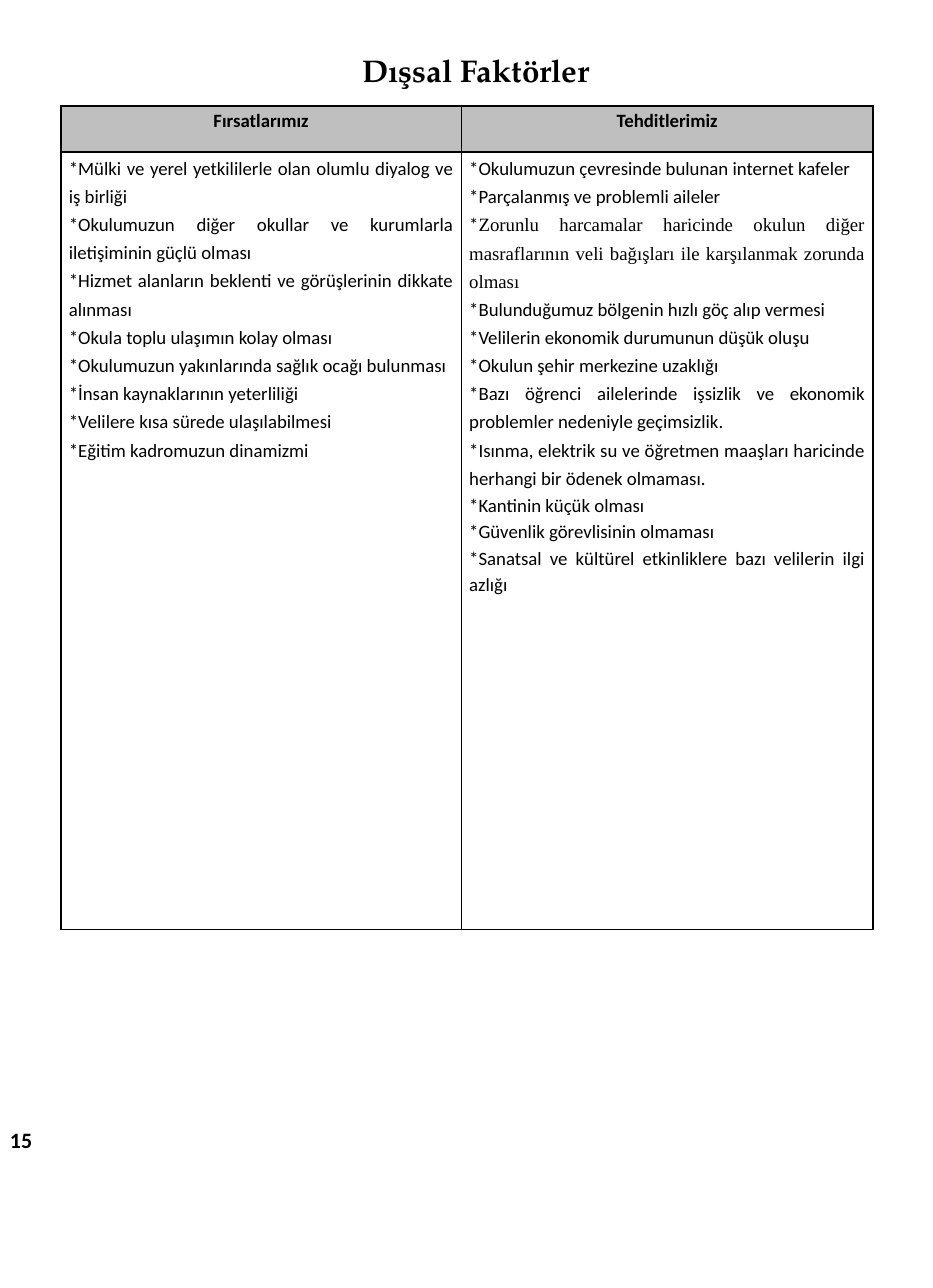
from dataclasses import dataclass

from lxml import etree
from pptx import Presentation
from pptx import util as u
from pptx.dml.color import RGBColor
from pptx.enum import text
from pptx.oxml.ns import qn


@dataclass(frozen=True)
class Theme:
    """Colours, fonts and type sizes of the slide."""
    ink: str = "000000"
    paper: str = "FFFFFF"
    header: str = "BFBFBF"
    title_font: str = "TeX Gyre Pagella"
    body_font: str = "Calibri"
    serif_font: str = "Times New Roman"
    title_size: int = 20
    number_size: int = 14
    body_size: int = 12
    border: float = 1
    loose: int = 18
    tight: int = 17


THEME = Theme()
TITLE_BOX = (37.61, 3.5, 28.05, 3.85)
TABLE_BOX = (6.53, 8.23, 87.06, 63.92)
NUMBER_BOX = (-0.12, 87.04, 6.17, 2.98)
LEFT_SHARE, HEADER_SHARE = 0.493, 0.056

HEADERS = ("Fırsatlarımız", "Tehditlerimiz")
OPPORTUNITIES = (
    "Mülki ve yerel yetkililerle olan olumlu diyalog ve iş birliği",
    "Okulumuzun diğer okullar ve kurumlarla iletişiminin güçlü olması",
    "Hizmet alanların beklenti ve görüşlerinin dikkate alınması",
    "Okula toplu ulaşımın kolay olması",
    "Okulumuzun yakınlarında sağlık ocağı bulunması",
    "İnsan kaynaklarının yeterliliği",
    "Velilere kısa sürede ulaşılabilmesi",
    "Eğitim kadromuzun dinamizmi",
)
SERIF_THREAT = ("Zorunlu harcamalar haricinde okulun diğer masraflarının "
                "veli bağışları ile karşılanmak zorunda olması")
TIGHT_THREATS = (
    "Kantinin küçük olması",
    "Güvenlik görevlisinin olmaması",
    "Sanatsal ve kültürel etkinliklere bazı velilerin ilgi azlığı",
)
THREATS = (
    "Okulumuzun çevresinde bulunan internet kafeler",
    "Parçalanmış ve problemli aileler",
    SERIF_THREAT,
    "Bulunduğumuz bölgenin hızlı göç alıp vermesi",
    "Velilerin ekonomik durumunun düşük oluşu",
    "Okulun şehir merkezine uzaklığı",
    "Bazı öğrenci ailelerinde işsizlik ve ekonomik problemler nedeniyle geçimsizlik.",
    "Isınma, elektrik su ve öğretmen maaşları haricinde herhangi bir ödenek olmaması.",
) + TIGHT_THREATS


def place(prs, box):
    """Turn a box in percent of the slide into lengths."""
    sides = (prs.slide_width, prs.slide_height) * 2
    return [u.Emu(int(side * share / 100)) for side, share in zip(sides, box)]


def style(p, size, font=THEME.body_font, bold=True):
    """Set the font of a whole paragraph."""
    p.font.size, p.font.name, p.font.bold = u.Pt(size), font, bold
    p.font.color.rgb = RGBColor.from_string(THEME.ink)


def add_title(slide, box):
    """Format the title placeholder in its box."""
    sp = slide.shapes.title
    sp.left, sp.top, sp.width, sp.height = box
    tf = sp.text_frame
    tf.text = "Dışsal Faktörler"
    tf.word_wrap, tf.auto_size = False, text.MSO_AUTO_SIZE.NONE
    tf.vertical_anchor = text.MSO_ANCHOR.TOP
    p = tf.paragraphs[0]
    p.alignment = text.PP_ALIGN.LEFT
    style(p, THEME.title_size, THEME.title_font)


def add_page_number(slide, box):
    """Write the page number in its box."""
    tf = slide.shapes.add_textbox(*box).text_frame
    tf.word_wrap = True
    tf.text = "15"
    style(tf.paragraphs[0], THEME.number_size)


def format_cell(cell, fill):
    """Give a cell its borders, margins and fill."""
    tcPr = cell._tc.get_or_add_tcPr()
    for side in "LRTB":
        ln = etree.SubElement(tcPr, qn(f"a:ln{side}"), w=str(u.Pt(THEME.border)))
        solid = etree.SubElement(ln, qn("a:solidFill"))
        etree.SubElement(solid, qn("a:srgbClr"), val=THEME.ink)
    cell.margin_left = cell.margin_right = u.Inches(0.07)
    cell.margin_top = cell.margin_bottom = 0
    cell.fill.solid()
    cell.fill.fore_color.rgb = RGBColor.from_string(fill)


def fill_header(cell, heading):
    """Write a column heading."""
    format_cell(cell, THEME.header)
    cell.text = heading
    p = cell.text_frame.paragraphs[0]
    p.alignment = text.PP_ALIGN.CENTER
    p.line_spacing, p.space_after = 1.15, u.Pt(6)
    style(p, THEME.body_size)


def fill_list(cell, items):
    """Write one starred paragraph for each item."""
    format_cell(cell, THEME.paper)
    tf = cell.text_frame
    for i, item in enumerate(items):
        p = tf.add_paragraph() if i else tf.paragraphs[0]
        p.alignment = text.PP_ALIGN.JUSTIFY
        p.line_spacing = u.Pt(THEME.tight if item in TIGHT_THREATS else THEME.loose)
        style(p, THEME.body_size, bold=False)
        if item == SERIF_THREAT:
            p.add_run().text = "*"
            r = p.add_run()
            r.text, r.font.name = item, THEME.serif_font
        else:
            p.add_run().text = "*" + item


def add_factor_table(slide, box):
    """Build the table of opportunities and threats in its box."""
    table = slide.shapes.add_table(2, 2, *box).table
    width, height = box[2:]
    table.columns[0].width = int(width * LEFT_SHARE)
    table.columns[1].width = width - table.columns[0].width
    table.rows[0].height = int(height * HEADER_SHARE)
    table.rows[1].height = height - table.rows[0].height
    for col, (heading, items) in enumerate(zip(HEADERS, (OPPORTUNITIES, THREATS))):
        fill_header(table.cell(0, col), heading)
        fill_list(table.cell(1, col), items)


def main():
    """Build and save the slide."""
    prs = Presentation()
    prs.slide_width, prs.slide_height = u.Inches(8.27), u.Inches(11.42)
    slide = prs.slides.add_slide(prs.slide_layouts[5])
    add_title(slide, place(prs, TITLE_BOX))
    add_page_number(slide, place(prs, NUMBER_BOX))
    add_factor_table(slide, place(prs, TABLE_BOX))
    prs.save("out.pptx")


if __name__ == "__main__":
    main()
